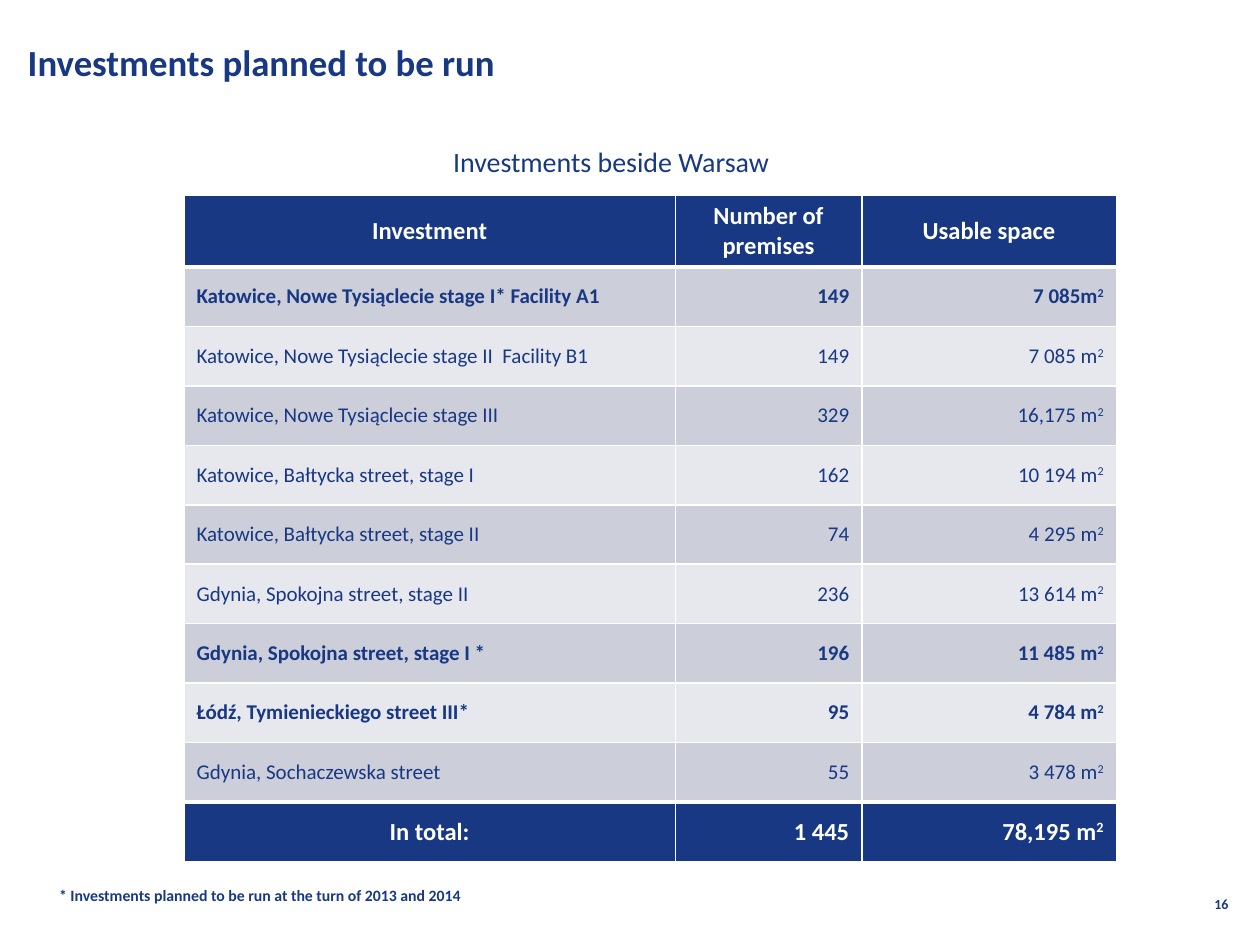
import lxml.etree
import pptx
import pptx.dml.color
import pptx.enum.text
import pptx.oxml.ns
import pptx.util

Inches = pptx.util.Inches
Pt = pptx.util.Pt
ALIGN = pptx.enum.text.PP_ALIGN
ANCHOR = pptx.enum.text.MSO_ANCHOR
NAVY, WHITE = "183884", "FFFFFF"
BANDS = ("CCCED9", "E7E8ED")


def format_paragraph(paragraph, size, color, bold, alignment):
    paragraph.alignment = alignment
    paragraph.font.name = "Calibri"
    paragraph.font.size = Pt(size)
    paragraph.font.bold = bold
    paragraph.font.color.rgb = pptx.dml.color.RGBColor.from_string(color)


def add_border(cell, side, width):
    """Add a white border; side is L, R, T or B, added in that order."""
    properties = cell._tc.get_or_add_tcPr()
    qn = pptx.oxml.ns.qn
    line = lxml.etree.SubElement(properties, qn(f"a:ln{side}"), w=str(Pt(width)))
    fill = lxml.etree.SubElement(line, qn("a:solidFill"))
    lxml.etree.SubElement(fill, qn("a:srgbClr"), val=WHITE)


presentation = pptx.Presentation()
presentation.slide_width = Inches(10)
presentation.slide_height = Inches(7.5)
slide = presentation.slides.add_slide(presentation.slide_layouts[5])

title = slide.shapes.title
title.left, title.top = Inches(0.12), Inches(0.13)
title.width, title.height = Inches(8.19), Inches(0.72)
title.text_frame.text = "Investments planned to be run"
title.text_frame.vertical_anchor = ANCHOR.MIDDLE
format_paragraph(title.text_frame.paragraphs[0], 21, NAVY, True, ALIGN.LEFT)

# Caption, footnote and page number
labels = [
    ("Investments beside Warsaw", 2.64, 1.15, 4.42, 0.31,
     16, False, ALIGN.CENTER, ANCHOR.BOTTOM),
    ("* Investments planned to be run at the turn of 2013 and 2014",
     0.37, 6.98, 8.72, 0.25, 9, True, ALIGN.LEFT, ANCHOR.TOP),
    ("16", 7.52, 7.06, 2.33, 0.37, 8, True, ALIGN.RIGHT, ANCHOR.TOP),
]
for text, left, top, width, height, size, bold, alignment, anchor in labels:
    box = slide.shapes.add_textbox(
        Inches(left), Inches(top), Inches(width), Inches(height))
    box.text_frame.word_wrap = True
    box.text_frame.vertical_anchor = anchor
    box.text_frame.text = text
    format_paragraph(box.text_frame.paragraphs[0], size, NAVY, bold, alignment)

rows = [
    ("Investment", "Number of premises", "Usable space"),
    ("Katowice, Nowe Tysiąclecie stage I* Facility A1", "149", "7 085m"),
    ("Katowice, Nowe Tysiąclecie stage II  Facility B1", "149", "7 085 m"),
    ("Katowice, Nowe Tysiąclecie stage III", "329", "16,175 m"),
    ("Katowice, Bałtycka street, stage I", "162", "10 194 m"),
    ("Katowice, Bałtycka street, stage II", "74", "4 295 m"),
    ("Gdynia, Spokojna street, stage II", "236", "13 614 m"),
    ("Gdynia, Spokojna street, stage I *", "196", "11 485 m"),
    ("Łódź, Tymienieckiego street III*", "95", "4 784 m"),
    ("Gdynia, Sochaczewska street", "55", "3 478 m"),
    ("In total:", "1 445", "78,195 m"),
]
last = len(rows) - 1
table_height, header_height = 5.29, 0.57
table = slide.shapes.add_table(
    len(rows), 3, Inches(1.46), Inches(1.55), Inches(7.4), Inches(table_height)).table
for column, width in zip(table.columns, (3.9, 1.48, 2.02)):
    column.width = Inches(width)
for row in table.rows:
    row.height = Inches((table_height - header_height) / last)
table.rows[0].height = Inches(header_height)

for row_index, values in enumerate(rows):
    is_header, is_total = row_index == 0, row_index == last
    emphasized = is_header or is_total
    starred = "*" in values[0]
    for column_index, text in enumerate(values):
        cell = table.cell(row_index, column_index)
        cell.vertical_anchor = ANCHOR.MIDDLE
        add_border(cell, "L", 1)
        add_border(cell, "R", 1)
        add_border(cell, "T", 3 if row_index in (1, last) else 1)
        add_border(cell, "B", 3 if row_index in (0, last - 1) else 1)
        cell.fill.solid()
        cell.fill.fore_color.rgb = pptx.dml.color.RGBColor.from_string(
            NAVY if emphasized else BANDS[(row_index - 1) % 2])

        paragraph = cell.text_frame.paragraphs[0]
        paragraph.add_run().text = text
        if column_index == 2 and not is_header:
            exponent = paragraph.add_run()
            exponent.text = "2"
            exponent.font._element.set("baseline", "30000")
        if is_header or (is_total and column_index == 0):
            alignment = ALIGN.CENTER
        else:
            alignment = ALIGN.LEFT if column_index == 0 else ALIGN.RIGHT
        format_paragraph(paragraph, 14 if emphasized else 12,
                         WHITE if emphasized else NAVY,
                         emphasized or starred, alignment)

presentation.save("out.pptx")
